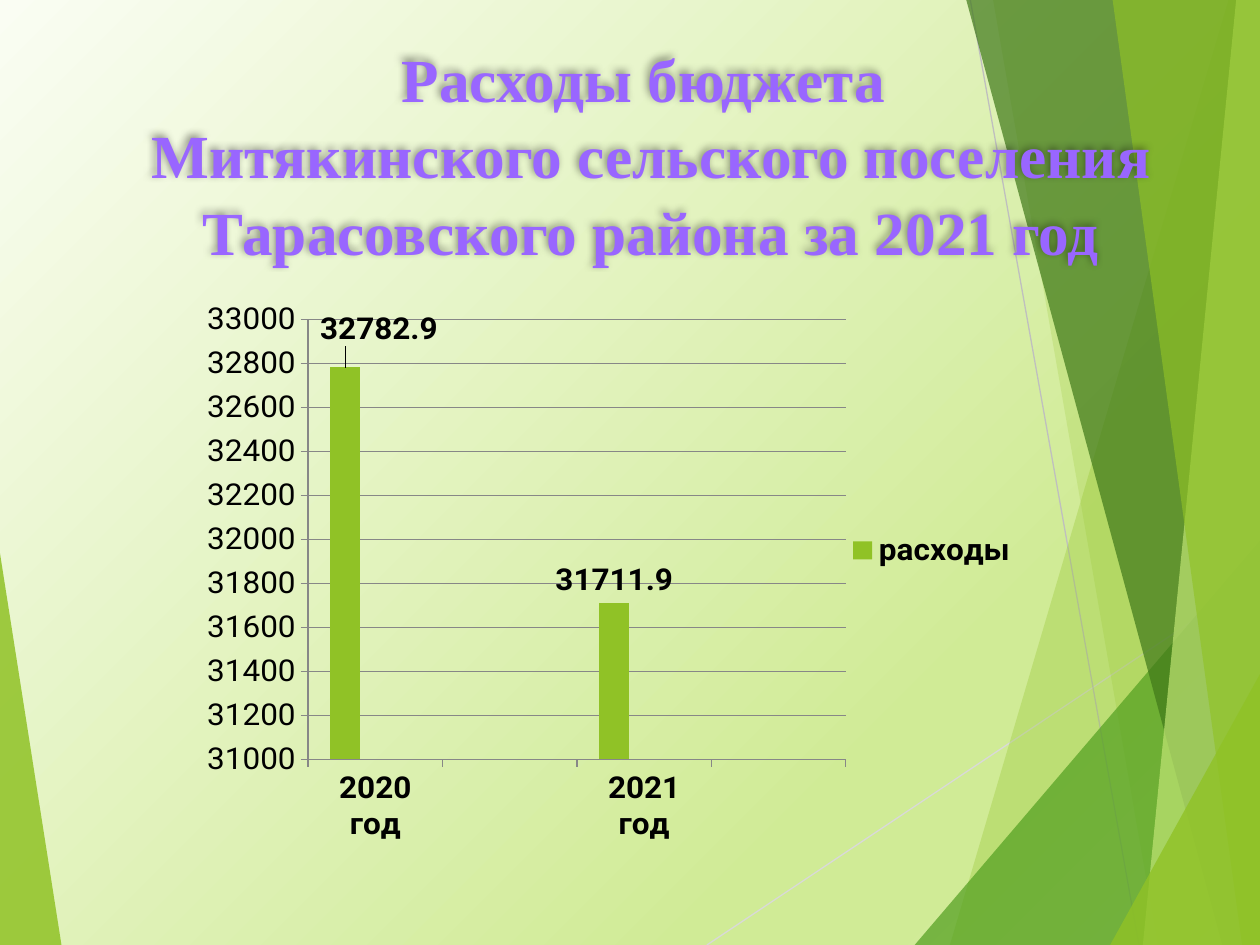
"""Builds a slide on the 2021 budget spending of a rural settlement, with a column chart."""
from lxml import etree
from pptx import Presentation
from pptx.chart.data import CategoryChartData
from pptx.dml.color import RGBColor
from pptx.enum.chart import XL_CHART_TYPE, XL_LABEL_POSITION, XL_LEGEND_POSITION, XL_TICK_MARK
from pptx.enum.shapes import MSO_CONNECTOR
from pptx.enum.text import MSO_ANCHOR, PP_ALIGN
from pptx.oxml import parse_xml
from pptx.oxml.ns import qn
from pptx.util import Cm, Pt

COLUMNS = XL_CHART_TYPE.COLUMN_CLUSTERED
OUTSIDE_END = XL_LABEL_POSITION.OUTSIDE_END
LEGEND_RIGHT = XL_LEGEND_POSITION.RIGHT
TICK_OUT = XL_TICK_MARK.OUTSIDE
STRAIGHT = MSO_CONNECTOR.STRAIGHT
TOP = MSO_ANCHOR.TOP
CENTER = PP_ALIGN.CENTER

W, H = 25.4, 19.05
THEME = {
    "heading": "9966FF", "text": "000000", "axis": "878787",
    "lime": "90C226", "green": "54A021", "dark": "3F7819", "pale": "C0E474", "gold": "E6B91E",
    "heading_font": "Times New Roman", "chart_font": "Roboto",
    "heading_size": 35, "chart_size": 18,
    "background": [(0, "FAFDF3"), (74, "D0EB96"), (83, "D0EB96"), (100, "DFF1B9")],
}
HEADING = ["Расходы бюджета ",
           "Митякинского сельского поселения Тарасовского района за 2021 год"]
YEARS = ["2020 год", "", "2021 год", ""]
SPENDING = [
    ("расходы", [32782.9, None, 31711.9, None], "lime"),
    ("Series 2", [None] * 4, "green"),
    ("Series 3", [None] * 4, "gold"),
]
RAYS = [
    ((14.25, H), (W, 11.61), "D9D9D9"),
    ((19.56, 0), (22.96, H), "BFBFBF"),
]
FACETS = [
    ([(0, 11.15), (1.24, H), (0, H)], "lime", 85),
    ([(24.77, 0), (19.15, H), (W, H), (W, 0)], "lime", 30),
    ([(20.02, 0), (23.34, H), (W, H), (W, 0)], "lime", 20),
    ([(18.44, H), (W, 10.9), (W, H)], "green", 72),
    ([(19.48, 0), (24.64, H), (W, H), (W, 0)], "dark", 70),
    ([(24.92, 0), (23.04, H), (W, H), (W, 0)], "pale", 70),
    ([(22.43, 0), (25.04, H), (W, H), (W, 0)], "lime", 65),
    ([(22.38, H), (W, 13.59), (W, H)], "lime", 80),
]
PLOT = {"x": 0.14, "y": 0.07, "w": 0.64, "h": 0.82}
FIRST_LABEL_SHIFT = {"x": 0.04, "y": -0.03}
A_NS = 'xmlns:a="http://schemas.openxmlformats.org/drawingml/2006/main"'


def rgb(name):
    return RGBColor.from_string(THEME.get(name, name))


def format_font(font, size, color, face, bold=False):
    font.size, font.bold, font.name = Pt(size), bold, face
    font.color.rgb = rgb(color)


def write_text(frame, lines, size, color, face, bold=False, align=CENTER, spacing=1.0):
    for index, line in enumerate(lines):
        paragraph = frame.paragraphs[0] if index == 0 else frame.add_paragraph()
        paragraph.alignment, paragraph.line_spacing = align, spacing
        paragraph.space_before = Pt(0)
        run = paragraph.add_run()
        run.text = line
        format_font(run.font, size, color, face, bold)


def paint_background(slide):
    stops = "".join(f'<a:gs pos="{place * 1000}"><a:srgbClr val="{color}"/></a:gs>'
                    for place, color in THEME["background"])
    slide.background.fill.solid()
    solid = slide.background._cSld.find(".//" + qn("a:solidFill"))
    solid.getparent().replace(solid, parse_xml(
        f'<a:gradFill {A_NS} rotWithShape="1"><a:gsLst>{stops}</a:gsLst>'
        '<a:lin ang="2700000" scaled="1"/></a:gradFill>'))


def add_ray(slide, start, end, color):
    ray = slide.shapes.add_connector(STRAIGHT, *map(Cm, start + end))
    ray.line.color.rgb, ray.line.width = rgb(color), Pt(0.75)
    etree.SubElement(ray._element.spPr, qn("a:effectLst"))


def add_facet(slide, corners, color, opacity):
    points = [(Cm(x), Cm(y)) for x, y in corners]
    builder = slide.shapes.build_freeform(*points[0])
    builder.add_line_segments(points[1:], close=True)
    facet = builder.convert_to_shape()
    facet.shadow.inherit = False
    facet.fill.solid()
    facet.fill.fore_color.rgb = rgb(color)
    facet.line.fill.background()
    tint = facet._element.spPr.find(".//" + qn("a:srgbClr"))
    etree.SubElement(tint, qn("a:alpha"), val=str(opacity * 1000))


def place_heading(slide):
    heading = slide.shapes.title
    heading.left, heading.top, heading.width, heading.height = map(Cm, (1.7, 0.64, 22.86, 3.18))
    frame = heading.text_frame
    frame.word_wrap, frame.vertical_anchor = True, TOP
    write_text(frame, HEADING, THEME["heading_size"], "heading", THEME["heading_font"],
               bold=True, spacing=1.04)
    heading._element.spPr.append(parse_xml(
        f'<a:effectLst {A_NS}><a:outerShdw blurRad="50800" dist="38100" dir="13500000">'
        '<a:srgbClr val="000000"><a:alpha val="40000"/></a:srgbClr></a:outerShdw></a:effectLst>'))
    slide.shapes._spTree.append(heading._element)


def manual_layout(sizes, inner=False):
    layout = etree.Element(qn("c:layout"))
    manual = etree.SubElement(layout, qn("c:manualLayout"))
    if inner:
        etree.SubElement(manual, qn("c:layoutTarget"), val="inner")
        for side in "xy":
            etree.SubElement(manual, qn(f"c:{side}Mode"), val="edge")
    for side, share in sizes.items():
        etree.SubElement(manual, qn(f"c:{side}"), val=str(share))
    return layout


def format_axis(axis, bold):
    axis.major_tick_mark = TICK_OUT
    format_font(axis.tick_labels.font, THEME["chart_size"], "text", THEME["chart_font"], bold)
    axis.format.line.color.rgb = rgb("axis")


def add_spending_chart(slide):
    data = CategoryChartData(number_format="General")
    data.categories = YEARS
    for name, values, _ in SPENDING:
        data.add_series(name, values)
    chart = slide.shapes.add_chart(COLUMNS, *map(Cm, (3.84, 5.69, 16.94, 11.28)), data).chart
    size, face = THEME["chart_size"], THEME["chart_font"]
    format_font(chart.font, size, "text", face)
    chart.has_title = False

    plot = chart.plots[0]
    plot.gap_width, plot.overlap, plot.vary_by_categories = 150, 0, False
    for series, (_, _, color) in zip(plot.series, SPENDING):
        series.format.fill.solid()
        series.format.fill.fore_color.rgb = rgb(color)

    format_axis(chart.category_axis, True)
    amounts = chart.value_axis
    format_axis(amounts, False)
    amounts.minimum_scale, amounts.maximum_scale, amounts.major_unit = 31000, 33000, 200
    amounts.has_major_gridlines = True
    amounts.major_gridlines.format.line.color.rgb = rgb("axis")

    spending = plot.series[0]
    labels = spending.data_labels
    labels.show_value, labels.position = True, OUTSIDE_END
    format_font(labels.font, size, "text", face, True)
    first_label = spending.points[0].data_label
    format_font(first_label.font, size, "text", face, True)
    first_label.position = OUTSIDE_END
    labels._element.find(qn("c:dLbl")).insert(1, manual_layout(FIRST_LABEL_SHIFT))

    chart.has_legend = True
    legend = chart.legend
    legend.position, legend.include_in_layout = LEGEND_RIGHT, False
    format_font(legend.font, size, "text", face, True)
    for offset, index in enumerate(range(1, len(SPENDING)), start=1):
        entry = etree.Element(qn("c:legendEntry"))
        etree.SubElement(entry, qn("c:idx"), val=str(index))
        etree.SubElement(entry, qn("c:delete"), val="1")
        legend._element.insert(offset, entry)

    plot_area = chart._chartSpace.chart.plotArea
    for layout in plot_area.findall(qn("c:layout")):
        plot_area.remove(layout)
    plot_area.insert(0, manual_layout(PLOT, inner=True))


def main():
    deck = Presentation()
    deck.slide_width, deck.slide_height = Cm(W), Cm(H)
    slide = deck.slides.add_slide(deck.slide_layouts[5])
    paint_background(slide)
    add_facet(slide, *FACETS[0])
    for ray in RAYS:
        add_ray(slide, *ray)
    for facet in FACETS[1:]:
        add_facet(slide, *facet)
    place_heading(slide)
    add_spending_chart(slide)
    deck.save("out.pptx")


if __name__ == "__main__":
    main()
